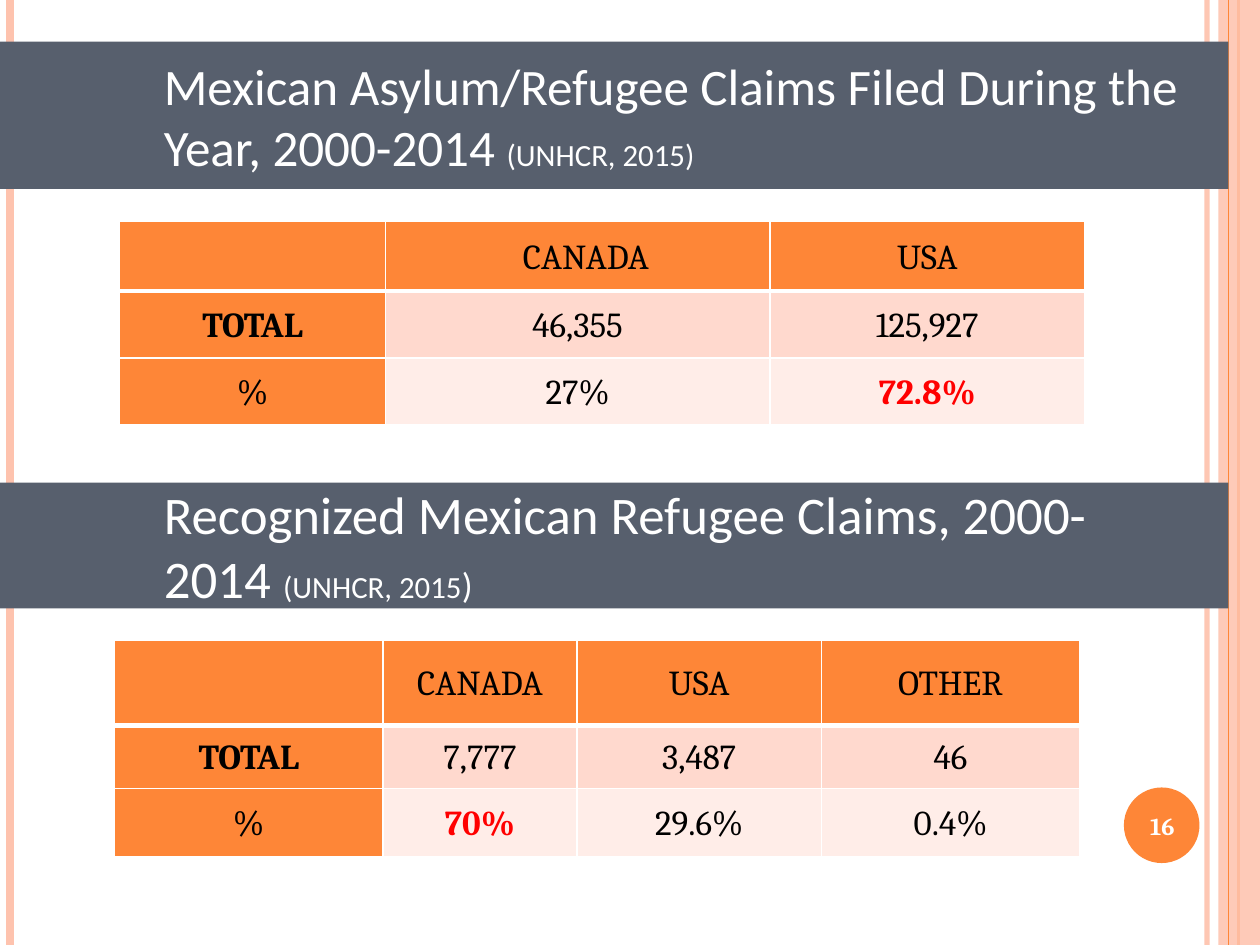
from dataclasses import dataclass

from lxml.etree import SubElement
from pptx import Presentation
from pptx.dml.color import RGBColor
from pptx.enum.shapes import MSO_CONNECTOR as Link, MSO_SHAPE as Kind
from pptx.enum.text import MSO_ANCHOR as Anchor, PP_ALIGN as Align
from pptx.oxml.ns import qn
from pptx.util import Inches, Pt

COLS, ROWS = 100, 75  # square grid over the whole slide
WIDE, HIGH = Inches(10), Inches(7.5)
HUES = {
    "white": "FFFFFF", "black": "000000", "red": "FF0000",
    "slate": "575F6D", "orange": "FE8637", "peach": "FEC3AE",
    "rose": "FFD9CE", "blush": "FFEDE8",
}


@dataclass
class Stripe:
    col: float
    hue: str
    weight: float
    alpha: int = 100


@dataclass
class Banner:
    row: float
    rows: float
    words: list[tuple[str, float]]


@dataclass
class Grid:
    col: float
    row: float
    widths: list[float]
    heights: list[float]
    cells: list[list[str]]
    key: str
    pads: tuple[float, float]  # side and top insets, in grid columns
    after: float = 0
    indent: float = 0  # first line of the first heading


STRIPES = [
    Stripe(95.8, "peach", 3, 93),
    Stripe(0.8, "peach", 4.5),
    Stripe(98.3, "orange", 1.5),
]
EDGE = Stripe(97.5, "orange", 0.75)
BANNERS = [
    Banner(3.3, 11.7, [
        ("Mexican Asylum/Refugee Claims Filed During the Year, 2000-2014 ", 29.2),
        ("(UNHCR, 2015)", 17.6)]),
    Banner(38.3, 10, [
        ("Recognized Mexican Refugee Claims, 2000-2014 ", 30.2),
        ("(UNHCR, 2015", 17.6), (")", 20.5)]),
]
GRIDS = [
    Grid(9.5, 17.6, [21.1, 30.5, 25], [5.5, 5.3, 5.3],
         [["", "CANADA", "USA"],
          ["TOTAL", "46,355", "125,927"],
          ["%", "27%", "72.8%"]], "72.8%", (0.1, 0.1), 8, 1.3),
    Grid(9.1, 50.8, [21.3, 15.4, 19.4, 20.5], [6.8, 5, 5.4],
         [["", "CANADA", "USA", "OTHER"],
          ["TOTAL", "7,777", "3,487", "46"],
          ["%", "70%", "29.6%", "0.4%"]], "70%", (0.7, 0)),
]


def across(n: float) -> int:
    return round(WIDE * n / COLS)


def down(n: float) -> int:
    return round(HIGH * n / ROWS)


def rgb(hue: str) -> RGBColor:
    return RGBColor.from_string(HUES[hue])


def fade(node, alpha: int) -> None:
    """Set the opacity, in percent, of the first colour inside node."""
    if alpha < 100:
        tone = next(node.iter(qn("a:srgbClr")))
        SubElement(tone, qn("a:alpha")).set("val", str(alpha * 1000))


def style(run, size: float, face: str, hue: str, bold: bool = False) -> None:
    font = run.font
    font.size, font.name, font.bold = Pt(size), face, bold
    font.color.rgb = rgb(hue)


def add_stripe(slide, item: Stripe) -> None:
    x = across(item.col)
    line = slide.shapes.add_connector(Link.STRAIGHT, x, 0, x, HIGH)
    line.line.color.rgb = rgb(item.hue)
    line.line.width = Pt(item.weight)
    props = line._element.spPr
    fade(props, item.alpha)
    SubElement(props, qn("a:effectLst"))


def add_block(slide, kind: Kind, box: tuple, hue: str, alpha: int = 100):
    x, y, w, h = box
    block = slide.shapes.add_shape(kind, across(x), down(y), across(w), down(h))
    block.shadow.inherit = False
    block.fill.solid()
    block.fill.fore_color.rgb = rgb(hue)
    block.line.fill.background()
    fade(block._element.spPr, alpha)
    return block


def add_banner(slide, item: Banner) -> None:
    block = add_block(slide, Kind.RECTANGLE, (0, item.row, 97.5, item.rows), "slate")
    frame = block.text_frame
    frame.word_wrap = True
    frame.vertical_anchor = Anchor.MIDDLE
    frame.margin_left, frame.margin_right = across(13), across(3)
    para = frame.paragraphs[0]
    para.alignment = Align.LEFT
    for text, size in item.words:
        run = para.add_run()
        run.text = text
        style(run, size, "Calibri", "white")


def add_edges(cell, head: bool) -> None:
    """Draw the cell's white borders, with a heavy one below a heading."""
    props = cell._tc.get_or_add_tcPr()
    for i, side in enumerate(("lnL", "lnR", "lnT", "lnB")):
        weight = Pt(3 if head and side == "lnB" else 1)
        edge = props.makeelement(qn(f"a:{side}"), {"w": str(weight)})
        fill = SubElement(edge, qn("a:solidFill"))
        SubElement(fill, qn("a:srgbClr")).set("val", HUES["white"])
        props.insert(i, edge)


def add_grid(slide, item: Grid) -> None:
    frame = slide.shapes.add_table(
        len(item.heights), len(item.widths), across(item.col), down(item.row),
        across(sum(item.widths)), down(sum(item.heights)))
    table = frame.table
    for col, n in zip(table.columns, item.widths):
        col.width = across(n)
    for row, n in zip(table.rows, item.heights):
        row.height = down(n)
    side, top = item.pads
    for r, line in enumerate(item.cells):
        for c, text in enumerate(line):
            cell = table.cell(r, c)
            cell.fill.solid()
            label = r == 0 or c == 0
            cell.fill.fore_color.rgb = rgb("orange" if label else ("rose", "blush")[r - 1])
            add_edges(cell, r == 0)
            cell.vertical_anchor = Anchor.MIDDLE
            cell.margin_left = cell.margin_right = across(side)
            cell.margin_top, cell.margin_bottom = down(top), 0
            para = cell.text_frame.paragraphs[0]
            para.text = text
            para.alignment = Align.CENTER
            para.line_spacing, para.space_after = 1.07, Pt(item.after)
            if (r, c) == (0, 1):
                para._p.get_or_add_pPr().set("indent", str(across(item.indent)))
            key = text == item.key
            for run in para.runs:
                style(run, 20, "Cambria", "red" if key else "black",
                      key or text == "TOTAL")


def add_number(slide, text: str) -> None:
    add_block(slide, Kind.OVAL, (89.2, 62.5, 6, 6), "orange")
    box = slide.shapes.add_textbox(across(88.9), down(62.7), across(6.7), down(5.7))
    frame = box.text_frame
    frame.word_wrap = True
    frame.vertical_anchor = Anchor.MIDDLE
    frame.text = text
    para = frame.paragraphs[0]
    para.alignment = Align.CENTER
    style(para.runs[0], 14, "Cambria", "white", True)


def main() -> None:
    deck = Presentation()
    deck.slide_width, deck.slide_height = WIDE, HIGH
    slide = deck.slides.add_slide(deck.slide_layouts[6])
    for item in STRIPES:
        add_stripe(slide, item)
    add_block(slide, Kind.RECTANGLE, (96.7, 0, 3.3, ROWS), "peach", 87)
    add_stripe(slide, EDGE)
    for item in BANNERS:
        add_banner(slide, item)
    for item in GRIDS:
        add_grid(slide, item)
    add_number(slide, "16")
    deck.save("out.pptx")


if __name__ == "__main__":
    main()
